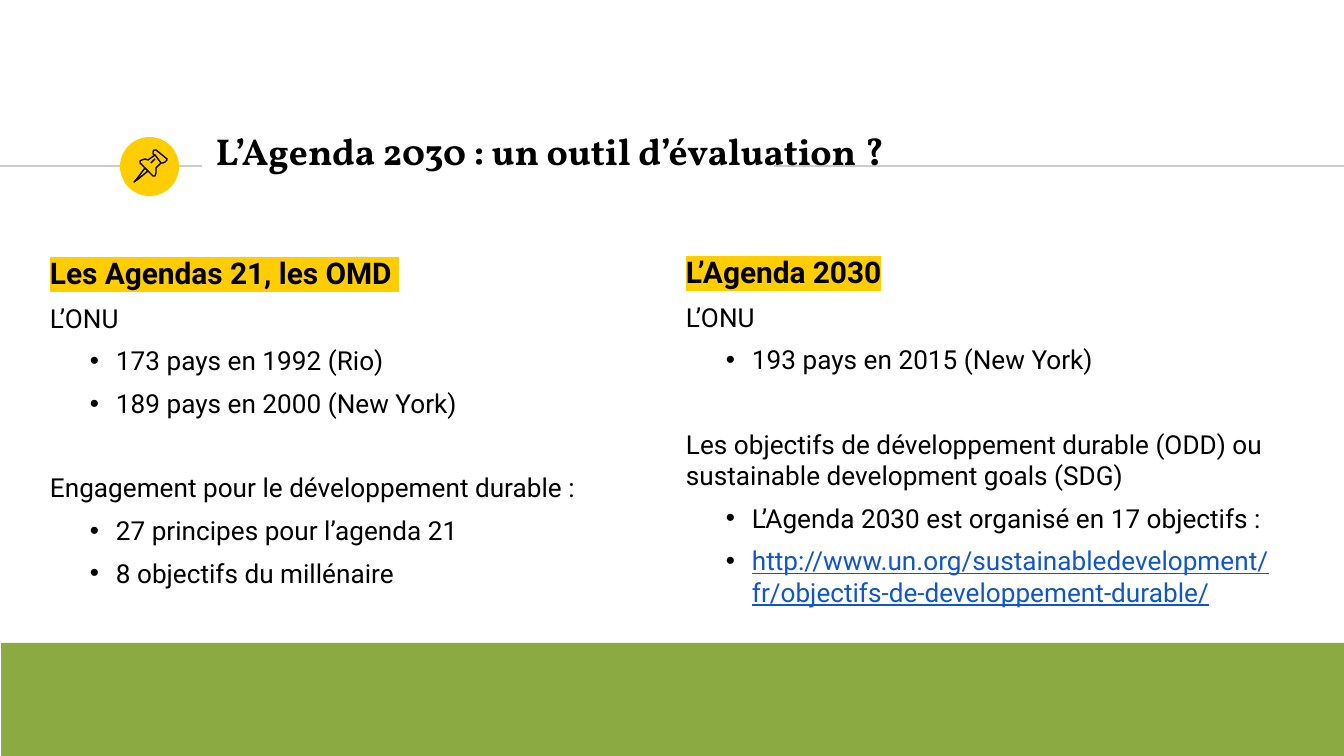
from lxml.etree import SubElement
from pptx import Presentation
from pptx.dml.color import RGBColor
from pptx.enum.shapes import MSO_CONNECTOR as CONN, MSO_SHAPE as SHAPE
from pptx.enum.text import MSO_ANCHOR as ANCHOR
from pptx.oxml.ns import qn
from pptx.util import Emu, Pt

SCALE = 914400 / 134.4
YELLOW, GREEN, GREY, BLACK, BLUE = "FFCD00", "8BAB42", "CCCCCC", "000000", "1155CC"

TITLE = {"name": "Vollkorn", "size": Pt(20), "bold": True}
HEAD = {"name": "Roboto", "size": Pt(16), "bold": True}
BODY = {"name": "Roboto", "size": Pt(14), "bold": False}
LINK = BODY | {"underline": True}

PLAIN = {"fmt": BODY, "before": 6}
STYLES = {
    "title": {"fmt": TITLE},
    "head": {"fmt": HEAD, "mark": YELLOW},
    "plain": PLAIN,
    "section": PLAIN | {"before": 28.5},
    "bullet": PLAIN | {"bullet": True},
    "link": {"fmt": LINK, "before": 6, "bullet": True, "color": BLUE},
}

LEFT = [
    ("head", "Les Agendas 21, les OMD "),
    ("plain", "L’ONU"),
    ("bullet", "173 pays en 1992 (Rio)"),
    ("bullet", "189 pays en 2000 (New York)"),
    ("section", "Engagement pour le développement durable :"),
    ("bullet", "27 principes pour l’agenda 21"),
    ("bullet", "8 objectifs du millénaire"),
]
RIGHT = [
    ("head", "L’Agenda 2030"),
    ("plain", "L’ONU"),
    ("bullet", "193 pays en 2015 (New York)"),
    ("section", "Les objectifs de développement durable (ODD) ou sustainable development goals (SDG)"),
    ("bullet", "L’Agenda 2030 est organisé en 17 objectifs :"),
    ("link", "http://www.un.org/sustainabledevelopment/fr/objectifs-de-developpement-durable/"),
]

NEEDLE = [(145, 168), (136, 180), (134, 182), (137, 180), (148, 171)]
CAP = [(155, 155), (161, 163), (163, 163), (165, 162), (167, 160), (167, 159),
       (156, 150), (154, 150), (153, 152), (153, 154)]
BARREL = [(155, 155), (148, 160), (145, 159), (142, 160), (140, 161), (140, 163),
          (153, 176), (155, 176), (156, 173), (156, 168), (161, 163)]
GLINT = [(151, 163), (155, 159)]


def px(n):
    return Emu(round(n * SCALE))


def rgb(color):
    return RGBColor.from_string(color)


class Deck:
    def __init__(self, width, height):
        self.prs = Presentation()
        self.prs.slide_width, self.prs.slide_height = px(width), px(height)
        self.s = self.prs.slides.add_slide(self.prs.slide_layouts[6])

    def line(self, x1, x2, y):
        sp = self.s.shapes.add_connector(CONN.STRAIGHT, px(x1), px(y), px(x2), px(y))
        sp.line.color.rgb = rgb(GREY)
        sp.line.width = Pt(0.75)
        SubElement(sp._element.spPr, qn("a:effectLst"))

    def shape(self, kind, x, y, w, h, fill):
        sp = self.s.shapes.add_shape(kind, px(x), px(y), px(w), px(h))
        sp.shadow.inherit = False
        sp.fill.solid()
        sp.fill.fore_color.rgb = rgb(fill)
        sp.line.fill.background()

    def outline(self, group, points, close):
        path = group.shapes.build_freeform(*points[0], scale=SCALE)
        path.add_line_segments(points[1:], close=close)
        sp = path.convert_to_shape()
        sp.shadow.inherit = False
        sp.fill.background()
        sp.line.color.rgb = rgb(BLACK)
        sp.line.width = Pt(0.75)

    def pin(self):
        group = self.s.shapes.add_group_shape()
        for points, close in [(NEEDLE, True), (CAP, True), (BARREL, False), (GLINT, False)]:
            self.outline(group, points, close)

    def text(self, x, y, w, h, rows, anchor=ANCHOR.TOP):
        tf = self.s.shapes.add_textbox(px(x), px(y), px(w), px(h)).text_frame
        frame = {"word_wrap": True, "vertical_anchor": anchor}
        frame |= {f"margin_{side}": px(13) for side in ("left", "top", "right", "bottom")}
        for key, value in frame.items():
            setattr(tf, key, value)
        for i, (style, words) in enumerate(rows):
            p = tf.add_paragraph() if i else tf.paragraphs[0]
            self.paragraph(p, words, **STYLES[style])

    def paragraph(self, p, words, fmt, color=BLACK, before=0, bullet=False, mark=None):
        p.space_before = Pt(before)
        if bullet:
            pPr = p._p.get_or_add_pPr()
            pPr.set("marL", str(px(66)))
            pPr.set("indent", str(px(-26)))
            SubElement(SubElement(pPr, qn("a:buClr")), qn("a:srgbClr"), val=BLACK)
            SubElement(pPr, qn("a:buFont"), typeface="Arial")
            SubElement(pPr, qn("a:buChar"), char="•")
        r = p.add_run()
        r.text = words
        r.font.color.rgb = rgb(color)
        if mark:
            highlight = SubElement(r.font._element, qn("a:highlight"))
            SubElement(highlight, qn("a:srgbClr"), val=mark)
        for key, value in fmt.items():
            setattr(r.font, key, value)


def main():
    deck = Deck(1344, 756)
    deck.line(0, 202, 166)
    deck.shape(SHAPE.OVAL, 120, 137, 59, 59, YELLOW)
    deck.line(774, 1344, 166)
    deck.shape(SHAPE.RECTANGLE, 1, 643, 1343, 113, GREEN)
    deck.text(203, 118, 727, 65, [("title", "L’Agenda 2030 : un outil d’évaluation ?")], ANCHOR.MIDDLE)
    deck.pin()
    deck.text(37, 242, 636, 371, LEFT)
    deck.text(673, 241, 645, 402, RIGHT)
    deck.prs.save("out.pptx")


if __name__ == "__main__":
    main()
